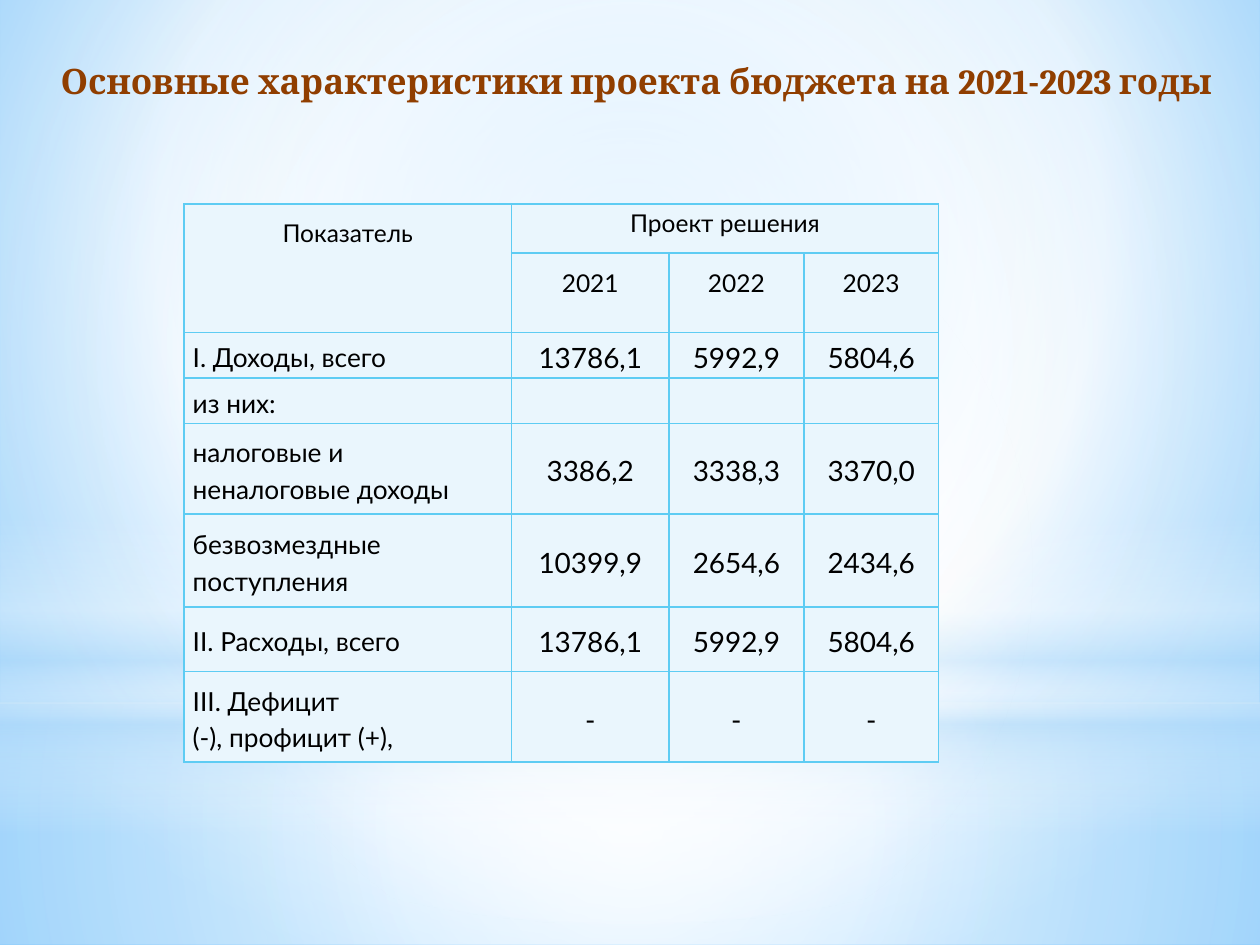
from lxml import etree
from pptx import Presentation
from pptx.dml.color import RGBColor
from pptx.enum.shapes import MSO_SHAPE
from pptx.enum.text import MSO_ANCHOR, PP_ALIGN
from pptx.oxml import parse_xml
from pptx.oxml.ns import qn
from pptx.util import Inches, Pt

RECTANGLE, OVAL = MSO_SHAPE.RECTANGLE, MSO_SHAPE.OVAL
LEFT, CENTER = PP_ALIGN.LEFT, PP_ALIGN.CENTER
TOP, MIDDLE = MSO_ANCHOR.TOP, MSO_ANCHOR.MIDDLE
NAMESPACE = 'xmlns:a="http://schemas.openxmlformats.org/drawingml/2006/main"'
LINE, CELL, TITLE, INK = "5ECCF3", "EAF6FD", "903E00", "000000"


def gradient(stops, focus=None):
    """Gradient of (position, colour, opacity); circular with a focus, else downward."""
    marks = "".join(
        f'<a:gs pos="{place * 1000}"><a:srgbClr val="{color}">'
        f'<a:alpha val="{opacity * 1000}"/></a:srgbClr></a:gs>'
        for place, color, opacity in stops)
    course = '<a:lin ang="5400000" scaled="0"/>'
    if focus:
        left, top, right, bottom = (side * 1000 for side in focus)
        course = (f'<a:path path="circle"><a:fillToRect l="{left}" t="{top}" '
                  f'r="{right}" b="{bottom}"/></a:path>')
    return parse_xml(f'<a:gradFill {NAMESPACE} rotWithShape="1">'
                     f'<a:gsLst>{marks}</a:gsLst>{course}</a:gradFill>')


def write(para, text, size, font, color, bold=False):
    span = para.add_run()
    span.text = text
    span.font.size, span.font.name, span.font.bold = Pt(size), font, bold
    span.font.color.rgb = RGBColor.from_string(color)


deck = Presentation()
deck.slide_width, deck.slide_height = Inches(10), Inches(7.5)
page = deck.slides.add_slide(deck.slide_layouts[5])

# Background glow
page.background.fill.solid()
backdrop = page._element.find(".//" + qn("p:bgPr"))
backdrop.replace(backdrop[0], gradient(
    [(0, "9ED5FF", 100), (60, "FFFFFF", 100), (100, "5BB9FF", 100)], (20, 10, 20, 60)))

# Translucent sky, ground, horizon and central light: top, height, shape, stops, focus
middle = (50, 50, 50, 50)
veils = [
    (5.58, 1.92, RECTANGLE,
     [(0, "FFFFFF", 91), (37, "FFFFFF", 76), (100, "B4DCFA", 79)], middle),
    (0, 5.58, RECTANGLE,
     [(0, "FFFFFF", 89), (48, "FFFFFF", 62), (100, "B4DCFA", 79)], middle),
    (4.12, 2.5, RECTANGLE,
     [(0, "FFFFFF", 0), (29, "FFFFFF", 30), (45, "B4DCFA", 40),
      (55, "FFFFFF", 26), (65, "B4DCFA", 60), (100, "FFFFFF", 0)], None),
    (1.75, 5.58, OVAL, [(0, "FFFFFF", 100), (56, "FFFFFF", 0)], middle),
]
for top, height, outline, stops, focus in veils:
    veil = page.shapes.add_shape(outline, 0, Inches(top), deck.slide_width, Inches(height))
    veil.shadow.inherit = False
    veil.line.fill.background()
    veil.fill.background()
    properties = veil._element.spPr
    properties.replace(properties.find(qn("a:noFill")), gradient(stops, focus))

# Title, brought in front of the veils
title = page.shapes.title
page.shapes._spTree.append(title._element)
title.left, title.top, title.width, title.height = map(Inches, (0.33, 0.13, 9.5, 1.02))
title.text_frame.word_wrap = True
title.text_frame.vertical_anchor = MIDDLE
para = title.text_frame.paragraphs[0]
para.alignment = CENTER
write(para, "Основные характеристики проекта бюджета на 2021-2023 годы ",
      20, "Cambria", TITLE, True)

# Budget table
rows = [
    ["Показатель", "Проект решения", "", ""],
    ["", "2021", "2022", "2023"],
    ["I. Доходы, всего", "13786,1", "5992,9", "5804,6"],
    ["из них:", "", "", ""],
    ["налоговые и неналоговые доходы", "3386,2", "3338,3", "3370,0"],
    ["безвозмездные поступления", "10399,9", "2654,6", "2434,6"],
    ["II. Расходы, всего", "13786,1", "5992,9", "5804,6"],
    ["III. Дефицит\n(-), профицит (+),", "-", "-", "-"],
]
widths = [2.6, 1.25, 1.07, 1.07]
heights = [0.39, 0.63, 0.36, 0.36, 0.72, 0.74, 0.51, 0.72]
table = page.shapes.add_table(len(rows), len(widths), Inches(1.46), Inches(1.62),
                              Inches(sum(widths)), Inches(sum(heights))).table
table.first_row = table.horz_banding = False
for column, width in zip(table.columns, widths):
    column.width = Inches(width)
for row, height in zip(table.rows, heights):
    row.height = Inches(height)
table.cell(0, 0).merge(table.cell(1, 0))
table.cell(0, 1).merge(table.cell(0, 3))

for r, texts in enumerate(rows):
    for c, text in enumerate(texts):
        cell = table.cell(r, c)
        header = r < 2
        cell.fill.solid()
        cell.fill.fore_color.rgb = RGBColor.from_string(CELL)
        cell.margin_left = cell.margin_right = Inches(0.07)
        cell.margin_top = cell.margin_bottom = 0
        cell.vertical_anchor = TOP if header else MIDDLE
        for place, side in enumerate(("lnL", "lnR", "lnT", "lnB")):
            border = etree.Element(qn("a:" + side), w=str(Pt(1)))
            paint = etree.SubElement(border, qn("a:solidFill"))
            etree.SubElement(paint, qn("a:srgbClr"), val=LINE)
            cell._tc.get_or_add_tcPr().insert(place, border)
        if not text:
            continue
        size = 14 if header else 16 if c else 15
        for number, line in enumerate(text.split("\n")):
            frame = cell.text_frame
            para = frame.add_paragraph() if number else frame.paragraphs[0]
            para.alignment = CENTER if header or c else LEFT
            para.line_spacing = 1.5 if header and (r, c) != (0, 1) else 1.15
            write(para, line, size, "Lato", INK)

deck.save("out.pptx")
